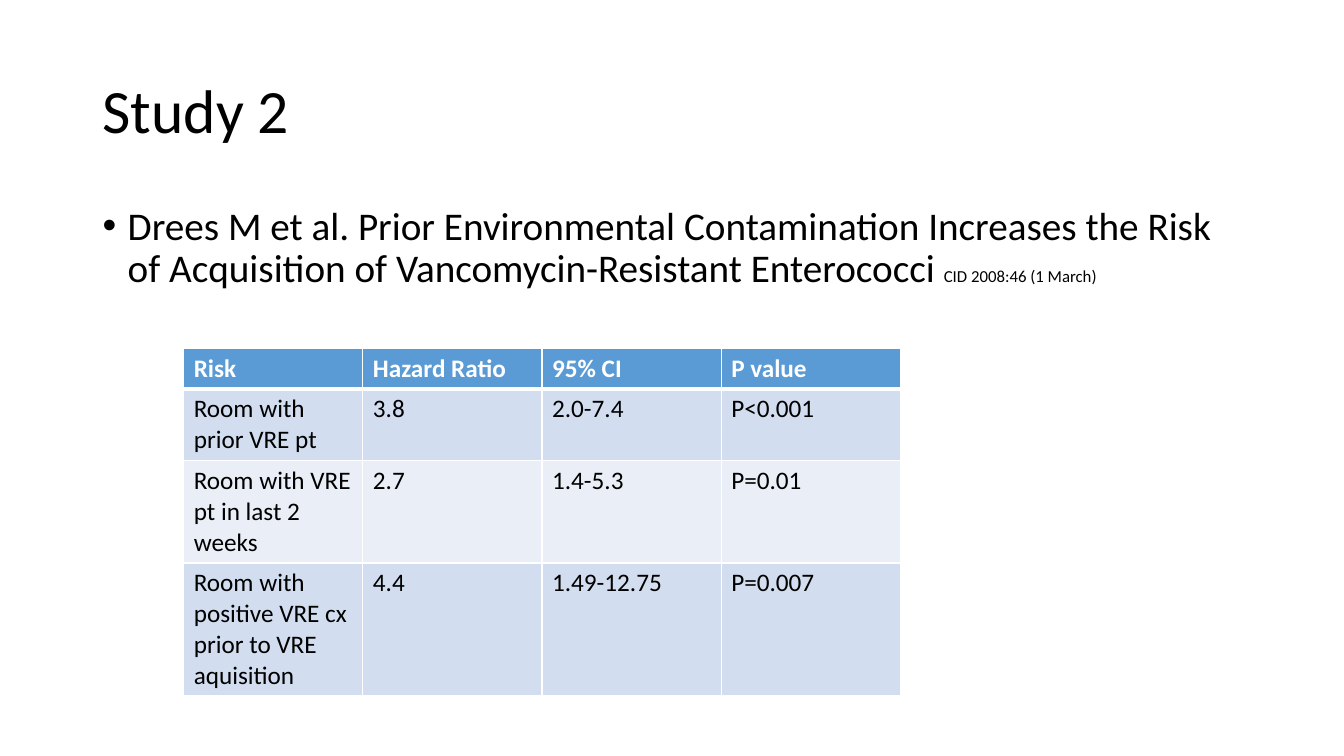
import pptx
import pptx.util
import pptx.dml.color
import pptx.enum.text
import pptx.oxml.ns
import lxml.etree
from dataclasses import dataclass

Cm = pptx.util.Cm
Pt = pptx.util.Pt


@dataclass(frozen=True)
class Theme:
    font: str = "Calibri"
    text: str = "000000"
    white: str = "FFFFFF"
    header: str = "5B9BD5"
    bands: tuple = ("D2DEEF", "EAEFF7")
    title_size: int = 44
    body_size: int = 28
    table_size: int = 18
    citation_size: int = 12


theme = Theme()


def add_run(paragraph, text, size, color, bold=False):
    run = paragraph.add_run()
    run.text = text
    for name, value in {"name": theme.font, "size": Pt(size), "bold": bold}.items():
        setattr(run.font, name, value)
    run.font.color.rgb = pptx.dml.color.RGBColor.from_string(color)


def add_border(cell, side, width):
    qn = pptx.oxml.ns.qn
    properties = cell._tc.get_or_add_tcPr()
    line = lxml.etree.SubElement(properties, qn(f"a:ln{side}"), w=str(Pt(width)))
    fill = lxml.etree.SubElement(line, qn("a:solidFill"))
    lxml.etree.SubElement(fill, qn("a:srgbClr"), val=theme.white)


presentation = pptx.Presentation()
presentation.slide_width = Cm(33.87)
presentation.slide_height = Cm(19.05)
slide = presentation.slides.add_slide(presentation.slide_layouts[1])
title = slide.shapes.title
body = slide.placeholders[1]

boxes = [
    (title, {"left": 2.33, "top": 1.01, "width": 29.21, "height": 3.68},
     pptx.enum.text.MSO_ANCHOR.MIDDLE),
    (body, {"left": 2.33, "top": 5.07, "width": 29.21, "height": 12.09},
     pptx.enum.text.MSO_ANCHOR.TOP),
]
for shape, box, anchor in boxes:
    for name, value in box.items():
        setattr(shape, name, Cm(value))
    frame_format = {
        "vertical_anchor": anchor,
        "word_wrap": True,
        "auto_size": pptx.enum.text.MSO_AUTO_SIZE.NONE,
    }
    for name, value in frame_format.items():
        setattr(shape.text_frame, name, value)
    paragraph = shape.text_frame.paragraphs[0]
    paragraph.alignment = pptx.enum.text.PP_ALIGN.LEFT
    paragraph.line_spacing = 0.9

add_run(title.text_frame.paragraphs[0], "Study 2", theme.title_size, theme.text)

reference = body.text_frame.paragraphs[0]
reference.space_before = Pt(10)
reference_properties = reference._p.get_or_add_pPr()
reference_properties.set("marL", str(Cm(0.635)))
reference_properties.set("indent", str(-Cm(0.635)))
add_run(
    reference,
    "Drees M et al. Prior Environmental Contamination Increases the Risk "
    "of Acquisition of Vancomycin-Resistant Enterococci ",
    theme.body_size,
    theme.text,
)
add_run(reference, "CID 2008:46 (1 March)", theme.citation_size, theme.text)

risks = [
    ("Risk", "Hazard Ratio", "95% CI", "P value"),
    ("Room with prior VRE pt", "3.8", "2.0-7.4", "P<0.001"),
    ("Room with VRE pt in last 2 weeks", "2.7", "1.4-5.3", "P=0.01"),
    ("Room with positive VRE cx prior to VRE aquisition", "4.4", "1.49-12.75", "P=0.007"),
]
row_height = Cm(1.03)
table = slide.shapes.add_table(
    len(risks), len(risks[0]), Cm(4.63), Cm(8.77), Cm(18.06), row_height * len(risks)
).table

for row_index, values in enumerate(risks):
    is_header = row_index == 0
    fill_color = theme.header if is_header else theme.bands[(row_index - 1) % 2]
    text_color = theme.white if is_header else theme.text
    widths = {"L": 1, "R": 1, "T": 3 if row_index == 1 else 1, "B": 3 if is_header else 1}
    table.rows[row_index].height = row_height
    for column_index, value in enumerate(values):
        cell = table.cell(row_index, column_index)
        for side, width in widths.items():
            add_border(cell, side, width)
        cell.fill.solid()
        cell.fill.fore_color.rgb = pptx.dml.color.RGBColor.from_string(fill_color)
        add_run(cell.text_frame.paragraphs[0], value, theme.table_size, text_color, is_header)

presentation.save("out.pptx")
